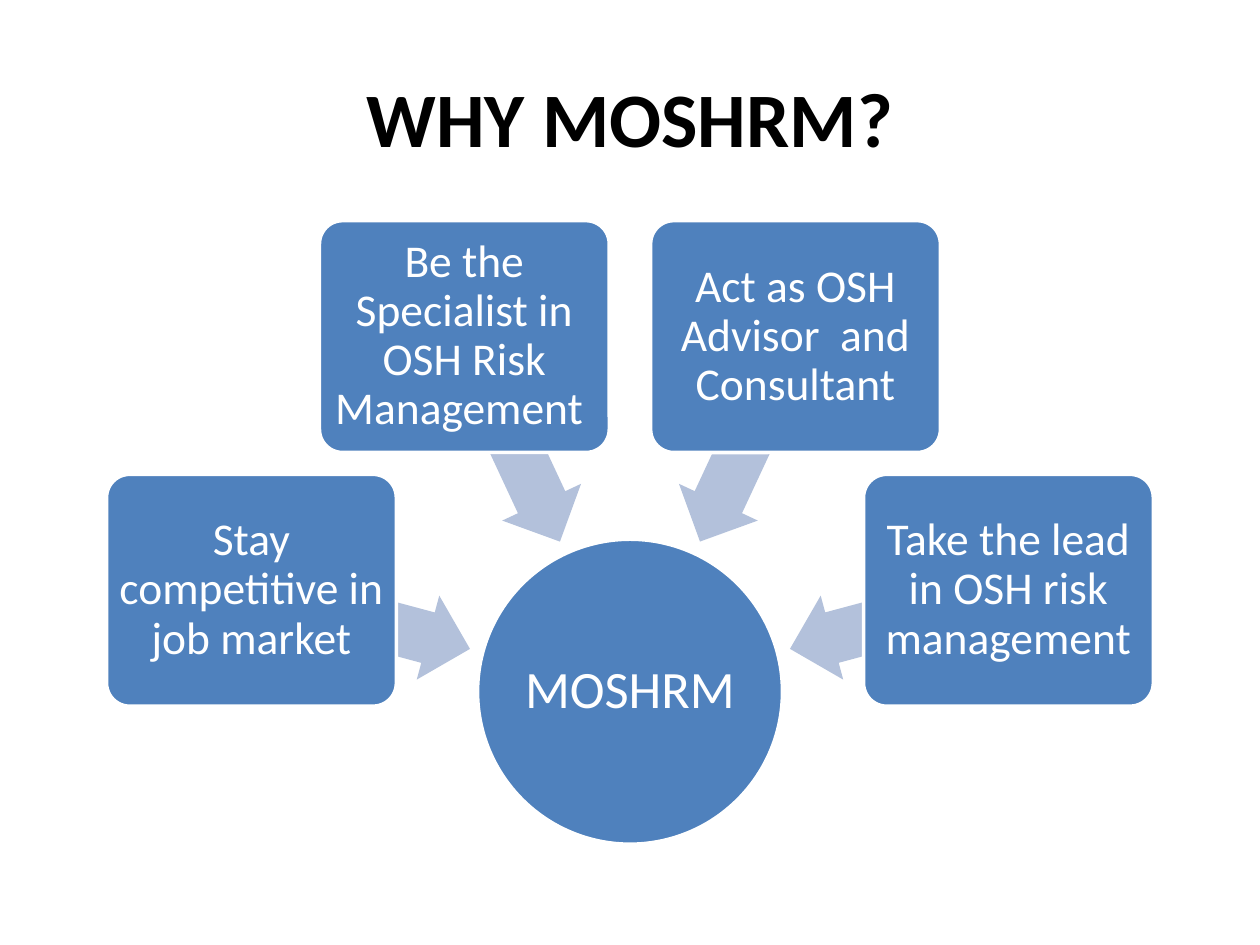
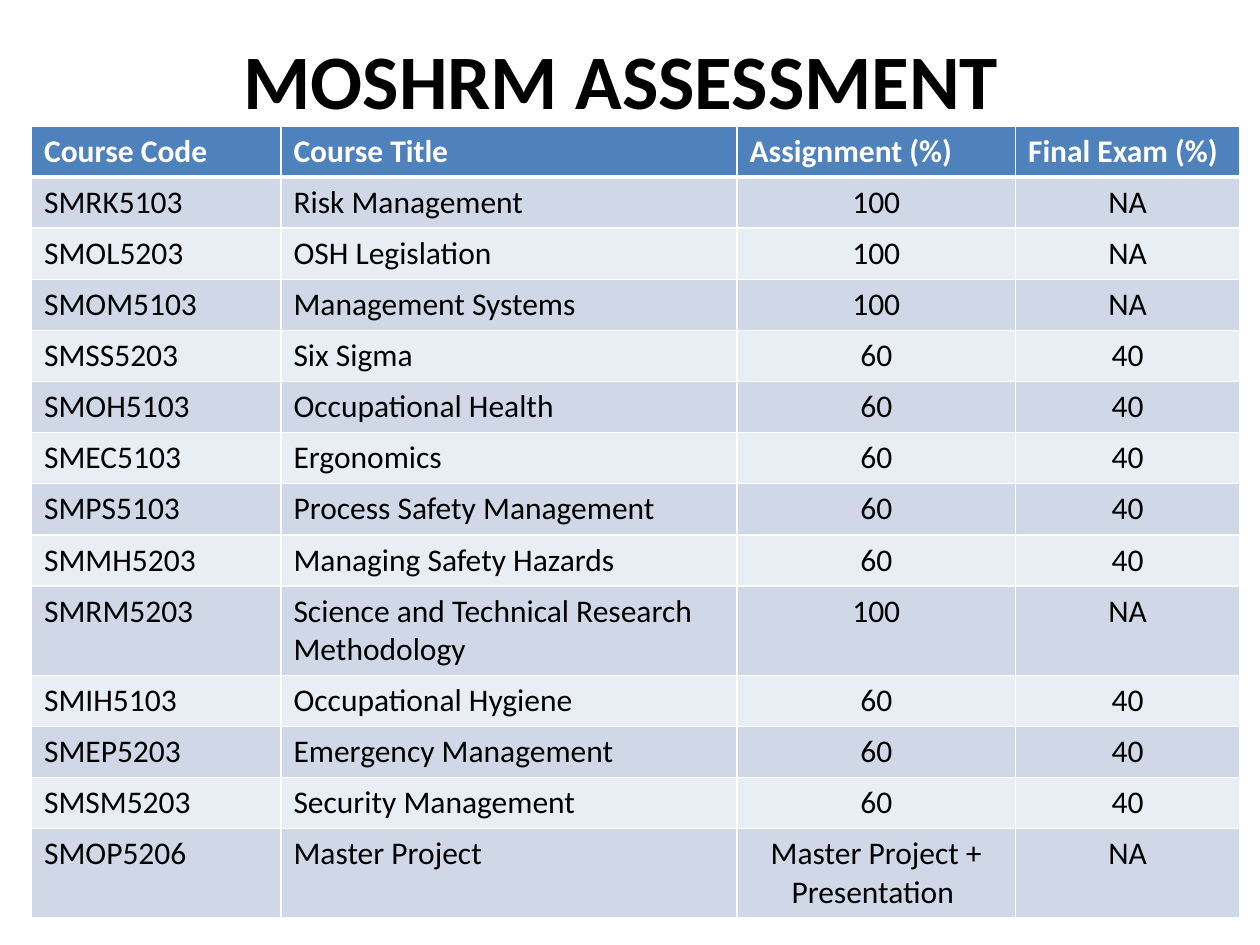
from dataclasses import dataclass
from math import cos, radians, sin
from typing import Any

from lxml.etree import SubElement
from pptx import Presentation
from pptx.dml.color import RGBColor
from pptx.enum.shapes import MSO_SHAPE as Shape
from pptx.enum.text import MSO_ANCHOR as Anchor, MSO_AUTO_SIZE as AutoSize, PP_ALIGN as Align
from pptx.oxml.ns import qn
from pptx.util import Inches, Pt

COLUMNS, ROWS = 100, 75  # the slide grid, in cells of a tenth of an inch
CELL = Inches(0.1)
FONT = "Calibri"
COLORS = {
    "accent": "4F81BD",
    "arrow": "B3C1DB",
    "band_dark": "D0D8E8",
    "band_light": "E9EDF4",
    "text": "000000",
    "white": "FFFFFF",
}


@dataclass(frozen=True)
class Node:
    """Style of one kind of part in the radial diagram, sized in grid cells."""
    preset: Any
    width: float
    height: float
    fill: str
    adjustments: tuple[float, ...] = ()
    outline: float = 0
    text_size: float = 0


HUB = Node(Shape.OVAL, 24.2, 24.2, "accent", outline=2, text_size=30)
REASON = Node(Shape.ROUNDED_RECTANGLE, 23, 18.4, "accent", (0.1,), 2, 26)
POINTER = Node(Shape.LEFT_ARROW, 18, 6.9, "arrow", (0.6, 0.5))

HUB_CENTER = (COLUMNS / 2, 54.9)
REASON_RADIUS, POINTER_RADIUS = 31.1, 22.15
FIRST_ANGLE, ANGLE_STEP = 195, 50
REASONS = [
    "Stay competitive in job market",
    "Be the Specialist in OSH Risk Management ",
    "Act as OSH Advisor  and Consultant",
    "Take the lead in OSH risk management",
]

TABLE_LEFT, TABLE_TOP = 2.5, 10
TABLE_COLUMNS = (19.8, 36.2, 22.1, 17.8)
LINE_ROW, WRAPPED_ROW = Pt(29.2), Pt(51.1)
WRAP_LENGTH = 28
HEADINGS = ("Course Code", "Course Title", "Assignment (%)", "Final Exam (%)")
FULL_ASSIGNMENT = ("100", "NA")
WITH_EXAM = ("60", "40")
COURSES = [
    ("SMRK5103", "Risk Management", *FULL_ASSIGNMENT),
    ("SMOL5203", "OSH Legislation", *FULL_ASSIGNMENT),
    ("SMOM5103", "Management Systems", *FULL_ASSIGNMENT),
    ("SMSS5203", "Six Sigma", *WITH_EXAM),
    ("SMOH5103", "Occupational Health", *WITH_EXAM),
    ("SMEC5103", "Ergonomics", *WITH_EXAM),
    ("SMPS5103", "Process Safety Management", *WITH_EXAM),
    ("SMMH5203", "Managing Safety Hazards", *WITH_EXAM),
    ("SMRM5203", "Science and Technical Research Methodology", *FULL_ASSIGNMENT),
    ("SMIH5103", "Occupational Hygiene", *WITH_EXAM),
    ("SMEP5203", "Emergency Management", *WITH_EXAM),
    ("SMSM5203", "Security Management", *WITH_EXAM),
    ("SMOP5206", "Master Project", "Master Project + Presentation ", "NA"),
]


def grid(cells: float) -> int:
    return round(cells * CELL)


def color(key: str) -> RGBColor:
    return RGBColor.from_string(COLORS[key])


def apply(target: Any, **formats: Any) -> None:
    for attribute, value in formats.items():
        setattr(target, attribute, value)


def write(frame: Any, text: str, size: float, ink: str, bold: bool = False,
          align: Any = Align.CENTER) -> Any:
    """Fill a text frame with one formatted paragraph and return it."""
    paragraph = frame.paragraphs[0]
    paragraph.alignment = align
    run = paragraph.add_run()
    run.text = text
    apply(run.font, name=FONT, size=Pt(size), bold=bold)
    run.font.color.rgb = color(ink)
    return paragraph


def add_titled_slide(deck: Any, title: str, top: float) -> Any:
    slide = deck.slides.add_slide(deck.slide_layouts[5])
    heading = slide.shapes.title
    apply(heading, left=grid(5), top=grid(top), width=grid(90), height=grid(12.5))
    apply(heading.text_frame, word_wrap=True, auto_size=AutoSize.NONE,
          vertical_anchor=Anchor.MIDDLE)
    write(heading.text_frame, title, 44, "text", bold=True)
    return slide


def add_node(slide: Any, node: Node, center: tuple[float, float], text: str = "",
             rotation: float = 0) -> None:
    x, y = center
    part = slide.shapes.add_shape(
        node.preset, grid(x - node.width / 2), grid(y - node.height / 2),
        grid(node.width), grid(node.height))
    part.shadow.inherit = False
    part.rotation = rotation
    for index, value in enumerate(node.adjustments):
        part.adjustments[index] = value
    part.fill.solid()
    part.fill.fore_color.rgb = color(node.fill)
    if node.outline:
        part.line.color.rgb = color("white")
        part.line.width = Pt(node.outline)
    else:
        part.line.fill.background()
    if text:
        apply(part.text_frame, margin_left=0, margin_right=0, margin_top=0, margin_bottom=0,
              word_wrap=" " in text, vertical_anchor=Anchor.MIDDLE)
        write(part.text_frame, text, node.text_size, "white").line_spacing = 0.9


def around_hub(radius: float, angle: float) -> tuple[float, float]:
    x, y = HUB_CENTER
    return x + radius * cos(radians(angle)), y + radius * sin(radians(angle))


def add_borders(cell: Any, bottom: float) -> None:
    """Rule a cell in white: 1 pt on three sides, the given width below."""
    properties = cell._tc.get_or_add_tcPr()
    for side, width in (("L", 1), ("R", 1), ("T", 1), ("B", bottom)):
        border = SubElement(properties, qn(f"a:ln{side}"), w=str(Pt(width)))
        fill = SubElement(border, qn("a:solidFill"))
        SubElement(fill, qn("a:srgbClr"), val=COLORS["white"])


def add_course_table(slide: Any) -> None:
    entries = [HEADINGS, *COURSES]
    heights = [WRAPPED_ROW if max(map(len, entry)) > WRAP_LENGTH else LINE_ROW
               for entry in entries]
    table = slide.shapes.add_table(
        len(entries), len(HEADINGS), grid(TABLE_LEFT), grid(TABLE_TOP),
        grid(sum(TABLE_COLUMNS)), sum(heights)).table
    for column, width in zip(table.columns, TABLE_COLUMNS):
        column.width = grid(width)
    for row, (entry, height) in enumerate(zip(entries, heights)):
        table.rows[row].height = height
        header = row == 0
        band = "accent" if header else "band_dark" if row % 2 else "band_light"
        for column, text in enumerate(entry):
            cell = table.cell(row, column)
            add_borders(cell, bottom=3 if header else 1)
            cell.fill.solid()
            cell.fill.fore_color.rgb = color(band)
            centred = not header and column >= 2
            write(cell.text_frame, text, 18, "white" if header else "text", header,
                  Align.CENTER if centred else Align.LEFT)


def build_reasons(deck: Any) -> None:
    slide = add_titled_slide(deck, "WHY MOSHRM?", top=3)
    add_node(slide, HUB, HUB_CENTER, "MOSHRM")
    for index, reason in enumerate(REASONS):
        angle = FIRST_ANGLE + index * ANGLE_STEP
        add_node(slide, POINTER, around_hub(POINTER_RADIUS, angle), rotation=angle)
        add_node(slide, REASON, around_hub(REASON_RADIUS, angle), reason)


def build_assessment(deck: Any) -> None:
    slide = add_titled_slide(deck, "MOSHRM ASSESSMENT ", top=0)
    add_course_table(slide)


def main() -> None:
    deck = Presentation()
    apply(deck, slide_width=grid(COLUMNS), slide_height=grid(ROWS))
    build_reasons(deck)
    build_assessment(deck)
    deck.save("out.pptx")


if __name__ == "__main__":
    main()
